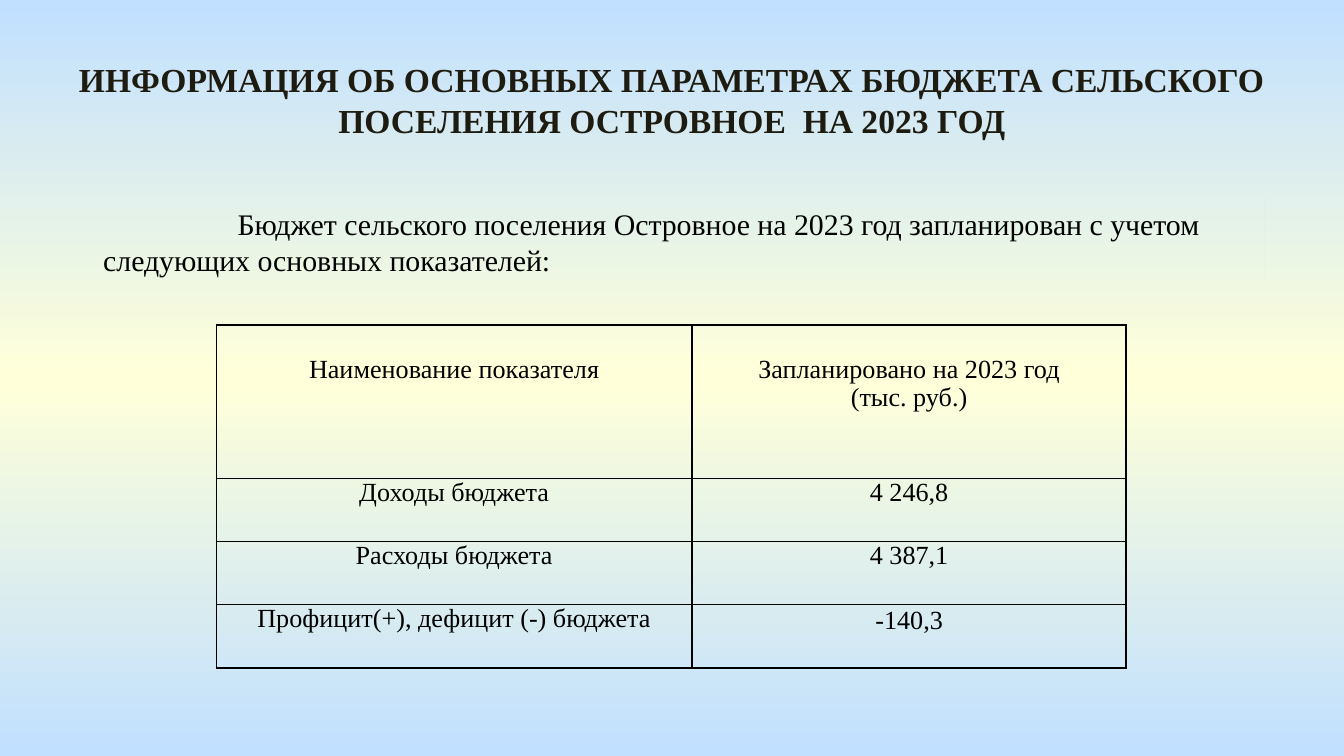
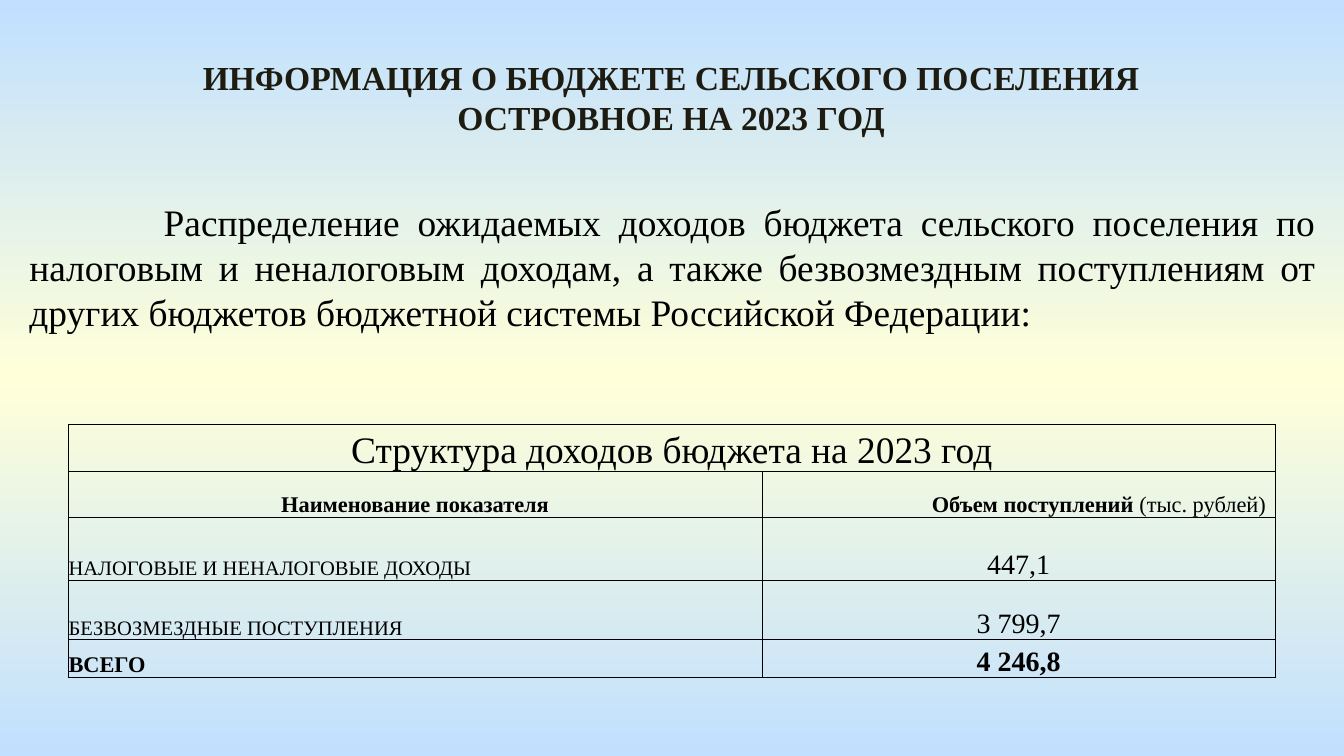
import copy
from dataclasses import dataclass

import lxml.etree
import pptx
import pptx.dml.color
import pptx.enum.text
import pptx.oxml.ns
import pptx.util

Inches, Pt = pptx.util.Inches, pptx.util.Pt
ALIGN = pptx.enum.text.PP_ALIGN
ANCHOR = pptx.enum.text.MSO_ANCHOR
qn = pptx.oxml.ns.qn


class Theme:
    font = "Times New Roman"
    sky, cream = "C1E0FF", "FFFFD9"
    title, ink = "1E1C11", "000000"
    title_size = 18
    indent = 1.0


@dataclass
class Cell:
    text: str
    size: float = 14
    align: ALIGN = ALIGN.CENTER
    bold: bool = False
    note: str = ""
    top: float = 0
    side: float = 0
    span: int = 1


def label(text, size=11, bold=False):
    return Cell(text, size, ALIGN.LEFT, bold)


def amount(text, bold=False):
    return Cell(text, 15, bold=bold)


# Content
SLIDES = [
    dict(
        title="ИНФОРМАЦИЯ ОБ ОСНОВНЫХ ПАРАМЕТРАХ БЮДЖЕТА СЕЛЬСКОГО ПОСЕЛЕНИЯ ОСТРОВНОЕ  НА 2023 ГОД",
        title_box=(0.35, 0.39, 9.3, 0.71),
        intro="Бюджет сельского поселения Островное на 2023 год запланирован с учетом "
              "следующих основных показателей:",
        intro_box=(0.67, 1.46, 8.74, 0.67), intro_size=16, intro_align=ALIGN.LEFT,
        table_at=(1.61, 2.42), cols=[3.54, 3.23], heights=[1.14, 0.47, 0.47, 0.47],
        anchor=ANCHOR.TOP, border=1,
        rows=[
            [Cell("Наименование показателя", top=0.22),
             Cell("Запланировано на 2023 год\n(тыс. руб.)", top=0.22)],
            [Cell("Доходы бюджета"), Cell("4 246,8")],
            [Cell("Расходы бюджета"), Cell("4 387,1")],
            [Cell("Профицит(+), дефицит (-) бюджета"), Cell("-140,3", top=0.01)],
        ],
    ),
    dict(
        title="ИНФОРМАЦИЯ О БЮДЖЕТЕ СЕЛЬСКОГО ПОСЕЛЕНИЯ ОСТРОВНОЕ НА 2023 ГОД",
        title_box=(1.13, 0.37, 7.73, 0.71),
        intro="Распределение ожидаемых доходов бюджета сельского поселения по налоговым "
              "и неналоговым доходам, а также безвозмездным поступлениям от других "
              "бюджетов бюджетной системы Российской Федерации:",
        intro_box=(0.12, 1.43, 9.77, 1.11), intro_size=20, intro_align=ALIGN.JUSTIFY,
        table_at=(0.51, 3.16), cols=[5.16, 3.82], heights=[0.35, 0.34, 0.47, 0.44, 0.28],
        anchor=ANCHOR.BOTTOM, border=0.5,
        rows=[
            [Cell("Структура доходов бюджета на 2023 год", 20, span=2)],
            [Cell("Наименование показателя", 12, bold=True),
             Cell("Объем поступлений ", 12, ALIGN.RIGHT, True, "(тыс. рублей)", side=0.07)],
            [label("НАЛОГОВЫЕ И НЕНАЛОГОВЫЕ ДОХОДЫ"), amount("447,1")],
            [label("БЕЗВОЗМЕЗДНЫЕ ПОСТУПЛЕНИЯ"), amount("3 799,7")],
            [label("ВСЕГО", 12, True), amount("4 246,8", True)],
        ],
    ),
]


def rgb(value):
    return pptx.dml.color.RGBColor.from_string(value)


def style(p, size, align, color=Theme.ink, bold=False):
    p.alignment = align
    p.font.name, p.font.size, p.font.bold = Theme.font, Pt(size), bold
    p.font.color.rgb = rgb(color)


def place(shape, box):
    shape.left, shape.top, shape.width, shape.height = map(Inches, box)


# Background: sky to cream and back, from top to bottom
def paint_background(s):
    fill = s.background.fill
    fill.gradient()
    fill.gradient_angle = 270
    for stop, color, pos in zip(fill.gradient_stops, (Theme.sky, Theme.cream), (0, 0.5)):
        stop.color.rgb = rgb(color)
        stop.position = pos
    stops = next(s.element.iter(qn("a:gsLst")))
    last = copy.deepcopy(stops[0])
    last.set("pos", "100000")
    stops.append(last)


def add_title(s, text, box):
    title = s.shapes.title
    place(title, box)
    tf = title.text_frame
    tf.text = text
    tf.word_wrap = True
    tf.auto_size = pptx.enum.text.MSO_AUTO_SIZE.NONE
    tf.vertical_anchor = ANCHOR.TOP
    style(tf.paragraphs[0], Theme.title_size, ALIGN.CENTER, Theme.title, True)


# Intro text on a box that shows the slide background
def add_intro(s, text, box, size, align):
    sp = s.shapes.add_textbox(*map(Inches, box))
    sp.element.set("useBgFill", "1")
    tf = sp.text_frame
    tf.word_wrap = True
    tf.vertical_anchor = ANCHOR.MIDDLE
    p = tf.paragraphs[0]
    p.text = text
    style(p, size, align)
    p._p.get_or_add_pPr().set("indent", str(Inches(Theme.indent)))


# Tables
def set_borders(cell, width):
    tc_pr = cell._tc.get_or_add_tcPr()
    for side in ("a:lnL", "a:lnR", "a:lnT", "a:lnB"):
        ln = lxml.etree.SubElement(tc_pr, qn(side), w=str(Pt(width)))
        fill = lxml.etree.SubElement(ln, qn("a:solidFill"))
        lxml.etree.SubElement(fill, qn("a:srgbClr"), val=Theme.ink)


def write_cell(cell, item):
    cell.margin_left = cell.margin_right = Inches(item.side)
    cell.margin_top = Inches(item.top)
    tf = cell.text_frame
    tf.text = item.text
    for p in tf.paragraphs:
        style(p, item.size, item.align, bold=item.bold)
    if item.note:
        r = tf.paragraphs[-1].add_run()
        r.text = item.note
        r.font.bold = False


def add_table(s, d):
    cols, heights = d["cols"], d["heights"]
    box = (*d["table_at"], sum(cols), sum(heights))
    table = s.shapes.add_table(len(heights), len(cols), *map(Inches, box)).table
    table.first_row = table.horz_banding = False
    for col, width in zip(table.columns, cols):
        col.width = Inches(width)
    for row, height in zip(table.rows, heights):
        row.height = Inches(height)
    for cell in table.iter_cells():
        cell.margin_left = cell.margin_right = cell.margin_top = cell.margin_bottom = 0
        cell.vertical_anchor = d["anchor"]
        set_borders(cell, d["border"])
        cell.fill.background()
    for i, row in enumerate(d["rows"]):
        for j, item in enumerate(row):
            if item.span > 1:
                table.cell(i, j).merge(table.cell(i, j + item.span - 1))
            write_cell(table.cell(i, j), item)


def main():
    prs = pptx.Presentation()
    # Widescreen, 16:9
    prs.slide_width, prs.slide_height = Inches(10), Inches(10 * 9 / 16)
    for d in SLIDES:
        s = prs.slides.add_slide(prs.slide_layouts[5])
        paint_background(s)
        add_intro(s, d["intro"], d["intro_box"], d["intro_size"], d["intro_align"])
        add_title(s, d["title"], d["title_box"])
        add_table(s, d)
    prs.save("out.pptx")


if __name__ == "__main__":
    main()
